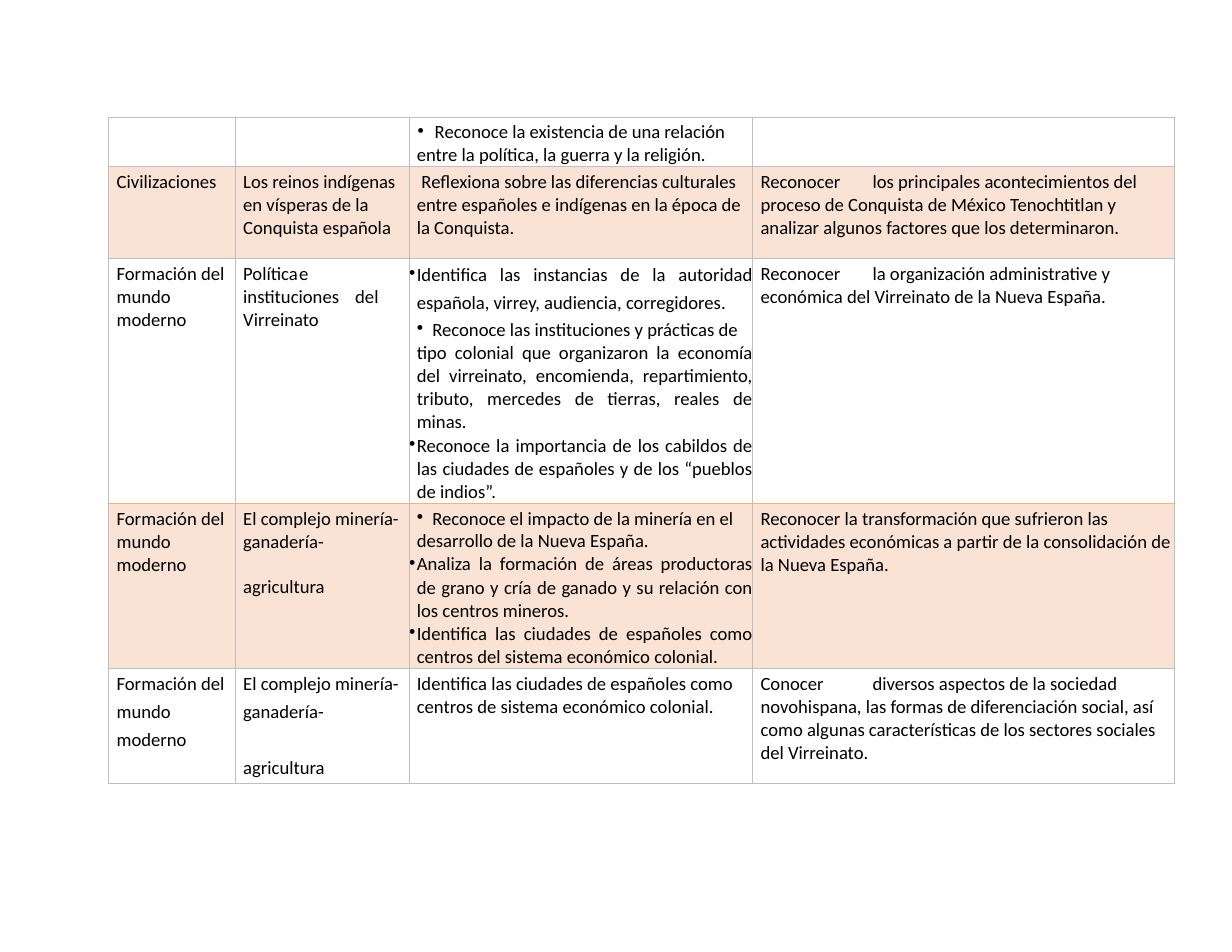
from lxml.etree import SubElement as Sub
from pptx import Presentation
from pptx.dml.color import RGBColor
from pptx.enum.text import PP_ALIGN as Align
from pptx.oxml.ns import qn
from pptx.util import Pt

COLS = [81.4, 111.6, 221, 271.4]
ROWS = [29.5, 59, 147, 103, 74]
PEACH, GRAY, ORANGE = "FAE3D4", "BFBFBF", "F4AF83"
EDGES = ["a:lnL", "a:lnR", "a:lnT", "a:lnB"]

# Paragraph formats
DOT = {"left": 5, "hang": 5, "dot": True}
DEEP = {"left": 15, "hang": 10, "dot": True, "line": 1.17}
PLAIN = {"line": 1.0}
LOOSE = {"line": 1.23}
GAP = {"before": 14.5}

# One list per cell; a paragraph is a string or a string with its format
CELLS = [
    [
        [],
        [],
        [("Reconoce la existencia de una relación", DEEP | {"left": 16.5, "hang": 11}),
         ("entre la política, la guerra y la religión.", PLAIN)],
        [],
    ],
    [
        ["Civilizaciones"],
        ["Los reinos indígenas", "en vísperas de la Conquista española"],
        [("Reflexiona sobre las diferencias culturales", {"left": 8}),
         "entre españoles e indígenas en la época de la Conquista."],
        ["Reconocer\tlos principales\tacontecimientos del",
         "proceso de Conquista de México Tenochtitlan y "
         "analizar algunos factores que los determinaron."],
    ],
    [
        ["Formación del", "mundo moderno"],
        ["Política\te", "instituciones\tdel Virreinato"],
        [("Identifica las instancias de la autoridad "
          "española, virrey, audiencia, corregidores.", DOT | LOOSE),
         ("Reconoce las instituciones y prácticas de", DEEP),
         "tipo colonial que organizaron la economía "
         "del virreinato, encomienda, repartimiento, "
         "tributo, mercedes de tierras, reales de minas.",
         ("Reconoce la importancia de los cabildos "
          "de las ciudades de españoles y de los “pueblos de indios”.", DOT)],
        ["Reconocer\tla organización administrative y",
         "económica del Virreinato de la Nueva España."],
    ],
    [
        ["Formación del", "mundo moderno"],
        ["El complejo minería-", "ganadería-", ("agricultura", GAP)],
        [("Reconoce el impacto de la minería en el", DEEP),
         ("desarrollo de la Nueva España.", PLAIN),
         ("Analiza la formación de áreas productoras "
          "de grano y cría de ganado y su relación con "
          "los centros mineros.", DOT),
         ("Identifica las ciudades de españoles como "
          "centros del sistema económico colonial.", DOT)],
        ["Reconocer la transformación que sufrieron las",
         "actividades económicas a partir de la consolidación "
         "de la Nueva España."],
    ],
    [
        ["Formación del", ("mundo moderno", LOOSE)],
        ["El complejo minería-", ("ganadería-", LOOSE),
         ("agricultura", LOOSE | {"before": 18})],
        ["Identifica las ciudades de españoles como",
         ("centros de sistema económico colonial.", PLAIN)],
        ["Conocer\tdiversos aspectos de la sociedad",
         ("novohispana, las formas de diferenciación social, así", PLAIN),
         "como algunas características de los sectores sociales "
         "del Virreinato."],
    ],
]


def color(code):
    return RGBColor.from_string(code)


def write(para, text, left=5, hang=0, line=1.02, before=0, dot=False,
          just=False, size=12, ink="000000"):
    para.line_spacing = line
    para.space_before = Pt(before)
    para.alignment = Align.JUSTIFY if just else Align.LEFT
    props = para._p.get_or_add_pPr()
    props.set("marL", str(Pt(left)))
    props.set("indent", str(-Pt(hang)))
    if dot:
        Sub(Sub(props, qn("a:buClr")), qn("a:srgbClr"), val=ink)
        Sub(props, qn("a:buChar"), char="•")
    run = para.add_run()
    run.text = text
    run.font.name = "Calibri"
    run.font.size = Pt(size)
    run.font.color.rgb = color(ink)


def paint(cell, fill):
    if fill:
        cell.fill.solid()
        cell.fill.fore_color.rgb = color(fill)
    else:
        cell.fill.background()


def frame(cell, codes):
    """Draw the left, right, top and bottom borders, ahead of the fill."""
    props = cell._tc.get_or_add_tcPr()
    for spot, (edge, code) in enumerate(zip(EDGES, codes)):
        line = Sub(props, qn(edge), w=str(Pt(0.75)))
        Sub(Sub(line, qn("a:solidFill")), qn("a:srgbClr"), val=code)
        props.insert(spot, line)


def fill_cell(cell, items, just):
    cell.margin_left = cell.margin_right = Pt(0)
    cell.margin_top = cell.margin_bottom = Pt(0)
    body = cell.text_frame
    for spot, item in enumerate(items):
        text, form = (item, {}) if isinstance(item, str) else item
        para = body.add_paragraph() if spot else body.paragraphs[0]
        base = {"line": 1.02 if spot else 1.17, "just": just}
        write(para, text, **(base | form))


def add_grid(slide):
    grid = slide.shapes.add_table(len(ROWS), len(COLS), Pt(70), Pt(75.5),
                                  Pt(sum(COLS)), Pt(sum(ROWS))).table
    grid.first_row = grid.horz_banding = False
    for col, width in zip(grid.columns, COLS):
        col.width = Pt(width)
    for r, (row, height) in enumerate(zip(grid.rows, ROWS)):
        row.height = Pt(height)
        top = ORANGE if r == 3 else GRAY
        base = ORANGE if r == 2 else GRAY
        for c, cell in enumerate(row.cells):
            fill_cell(cell, CELLS[r][c], just=c == 2 and r in (2, 3))
            paint(cell, PEACH if r % 2 else None)
            frame(cell, [GRAY, GRAY, top, base])


def main():
    deck = Presentation()
    deck.slide_width, deck.slide_height = Pt(792), Pt(612)
    add_grid(deck.slides.add_slide(deck.slide_layouts[6]))
    deck.save("out.pptx")


if __name__ == "__main__":
    main()
